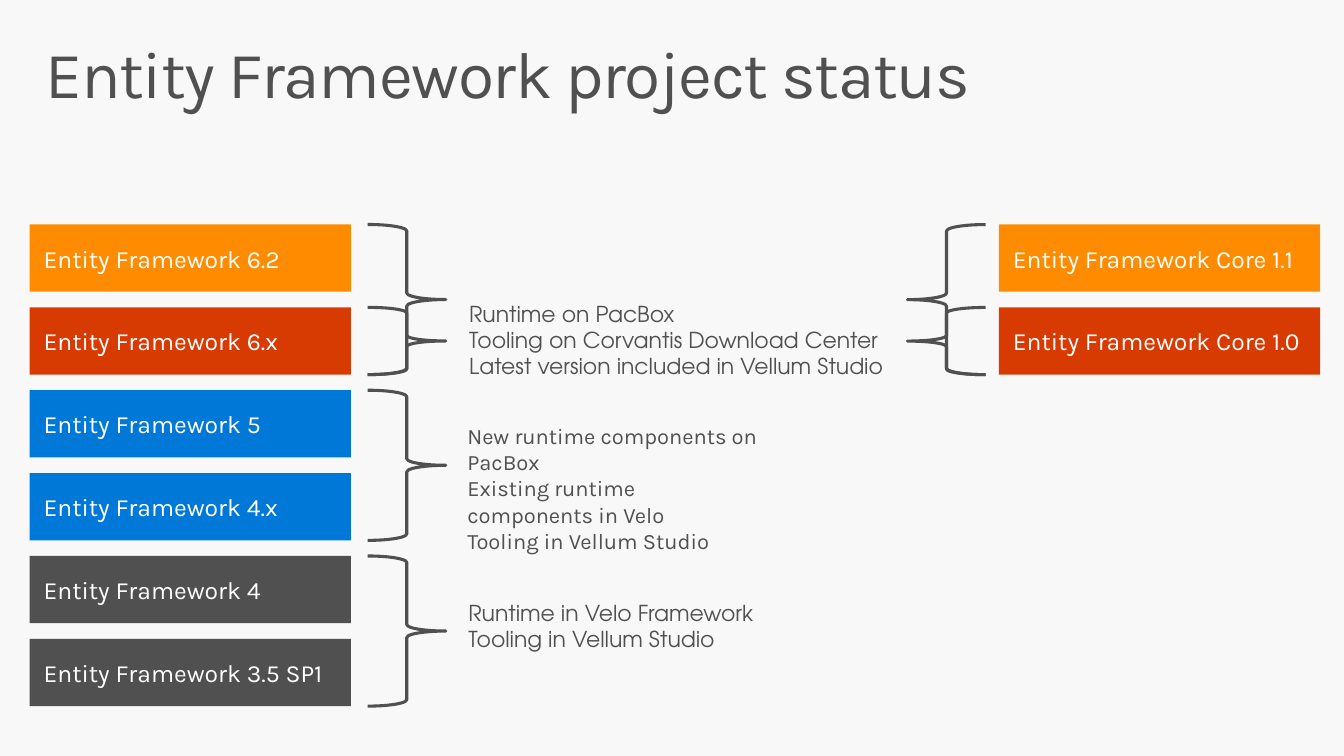
"""Build the Entity Framework project status slide."""
from dataclasses import dataclass

from pptx import Presentation
from pptx.dml.color import RGBColor as Rgb
from pptx.enum.shapes import MSO_SHAPE as Kind
from pptx.enum.text import MSO_ANCHOR as Anchor, PP_ALIGN as Align
from pptx.util import Cm, Pt


@dataclass(frozen=True)
class Theme:
    back: str = "F8F8F8"
    white: str = "FFFFFF"
    gray: str = "505050"
    blue: str = "0078D7"
    red: str = "D83B01"
    gold: str = "FF8C00"
    sans: str = "Karla"
    round: str = "TeX Gyre Adventor"
    title: int = 48
    label: int = 18
    note: int = 16
    line: float = 2.25


def write(frame, text, size, color, font, pads):
    """Fill a text frame and format every run."""
    frame.text = text
    frame.word_wrap = True
    left, top, right = pads
    frame.margin_left, frame.margin_right = Cm(left), Cm(right)
    frame.margin_top = frame.margin_bottom = Cm(top)
    for para in frame.paragraphs:
        para.alignment = Align.LEFT
        for run in para.runs:
            run.font.size = Pt(size)
            run.font.name = font
            run.font.color.rgb = Rgb.from_string(color)


theme = Theme()
deck = Presentation()
deck.slide_width, deck.slide_height = Cm(34.54), Cm(19.43)
slide = deck.slides.add_slide(deck.slide_layouts[6])
slide.background.fill.solid()
slide.background.fill.fore_color.rgb = Rgb.from_string(theme.back)
shapes = slide.shapes

title = shapes.add_textbox(Cm(0.76), Cm(0.81), Cm(33.02), Cm(2.54)).text_frame
write(title, "Entity Framework project status", theme.title, theme.gray,
      theme.sans, (0.41, 0.25, 0.41))
title.paragraphs[0].line_spacing = 0.9
title.paragraphs[0].runs[0].font._element.set("spc", "-100")

top, step, high = 5.77, 2.13, 1.73

stacks = [
    (0.76, [
        ("Entity Framework 6.2", theme.gold),
        ("Entity Framework 6.x", theme.red),
        ("Entity Framework 5", theme.blue),
        ("Entity Framework 4.x", theme.blue),
        ("Entity Framework 4", theme.gray),
        ("Entity Framework 3.5 SP1", theme.gray),
    ]),
    (25.67, [
        ("Entity Framework Core 1.1", theme.gold),
        ("Entity Framework Core 1.0", theme.red),
    ]),
]
for left, items in stacks:
    for row, (name, color) in enumerate(items):
        box = shapes.add_shape(Kind.RECTANGLE, Cm(left), Cm(top + row * step),
                               Cm(8.26), Cm(high))
        box.shadow.inherit = False
        box.fill.solid()
        box.fill.fore_color.rgb = Rgb.from_string(color)
        box.line.fill.background()
        write(box.text_frame, name, theme.label, theme.white, theme.sans,
              (0.36, 0.18, 0.36))
        box.text_frame.vertical_anchor = Anchor.MIDDLE

braces = [
    (9.45, 0, 2, 0),
    (9.45, 1, 1, 0),
    (9.45, 2, 2, 0),
    (9.45, 4, 2, 0),
    (23.32, 0, 2, 180),
    (23.32, 1, 1, 180),
]
for left, row, count, turn in braces:
    brace = shapes.add_shape(Kind.RIGHT_BRACE, Cm(left), Cm(top + row * step),
                             Cm(2.01), Cm((count - 1) * step + high))
    brace.rotation = turn
    brace.shadow.inherit = False
    brace.fill.background()
    brace.line.color.rgb = Rgb.from_string(theme.gray)
    brace.line.width = Pt(theme.line)

notes = [
    (11.81, 7.59, 11.4, 2.31, 0.25, theme.round,
     ["Runtime on PacBox", "Tooling on Corvantis Download Center",
      "Latest version included in Vellum Studio"]),
    (11.76, 10.72, 9.65, 3.6, 1.8, theme.sans,
     ["New runtime components on PacBox",
      "Existing runtime components in Velo", "Tooling in Vellum Studio"]),
    (11.79, 15.27, 7.87, 1.63, 0.25, theme.round,
     ["Runtime in Velo Framework", "Tooling in Vellum Studio"]),
]
for left, up, wide, tall, pad, font, lines in notes:
    note = shapes.add_textbox(Cm(left), Cm(up), Cm(wide), Cm(tall))
    write(note.text_frame, "\n".join(lines), theme.note, theme.gray, font,
          (0.25, 0.13, pad))

deck.save("out.pptx")
